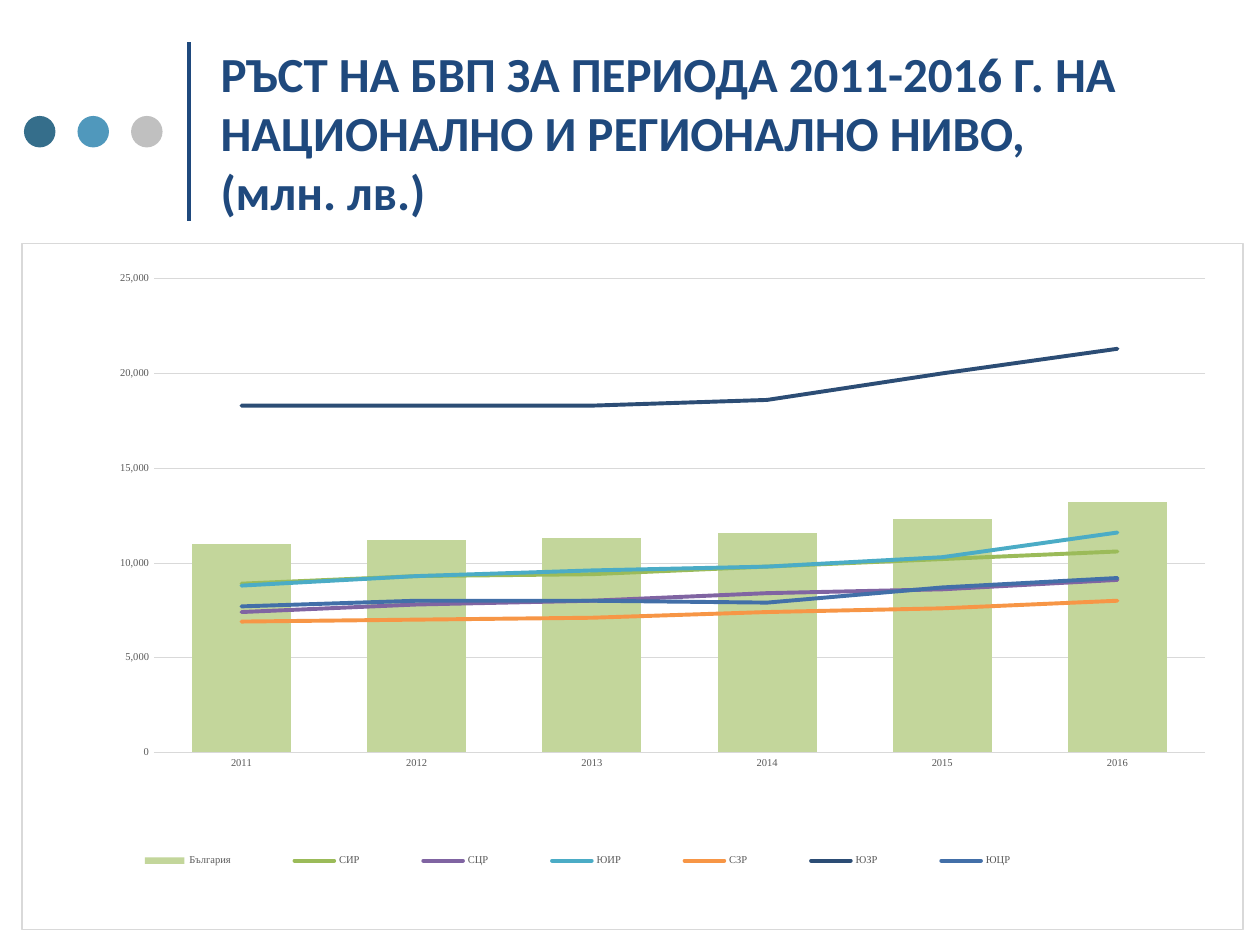
from lxml import etree
from pptx import Presentation
from pptx.chart.data import CategoryChartData
from pptx.dml.color import RGBColor
from pptx.enum.chart import (XL_CHART_TYPE as ChartType, XL_LEGEND_POSITION as LegendPosition,
                             XL_MARKER_STYLE as Marker, XL_TICK_MARK as Tick)
from pptx.enum.shapes import MSO_CONNECTOR as Connector, MSO_SHAPE as Shape
from pptx.enum.text import MSO_ANCHOR as Anchor, PP_ALIGN as Align
from pptx.oxml import parse_xml
from pptx.oxml.ns import nsdecls, qn
from pptx.util import Inches, Pt

COLORS = {"navy": "1F497D", "teal": "356E8B", "sky": "5098BC", "silver": "C0C0C0",
          "rule": "D9D9D9", "label": "595959", "white": "FFFFFF"}
YEARS = ["2011", "2012", "2013", "2014", "2015", "2016"]
COUNTRY = ("България", "C3D69B", [11000, 11200, 11300, 11600, 12300, 13200])
REGIONS = [
    ("СИР", "9BBB59", [8900, 9300, 9400, 9800, 10200, 10600]),
    ("СЦР", "8064A2", [7400, 7800, 8000, 8400, 8600, 9100]),
    ("ЮИР", "4BACC6", [8800, 9300, 9600, 9800, 10300, 11600]),
    ("СЗР", "F79646", [6900, 7000, 7100, 7400, 7600, 8000]),
    ("ЮЗР", "2C4D75", [18300, 18300, 18300, 18600, 20000, 21300]),
    ("ЮЦР", "426FA8", [7700, 8000, 8000, 7900, 8700, 9200]),
]


def rgb(color):
    return RGBColor.from_string(COLORS.get(color, color))


def set_font(font, name, size, color, bold=False):
    font.name, font.size, font.bold = name, Pt(size), bold
    font.color.rgb = rgb(color)


def write_text(frame, text, align=Align.LEFT, **font_format):
    """Fill a frame with one paragraph; a vertical tab breaks the line."""
    paragraph = frame.paragraphs[0]
    paragraph.text = text
    paragraph.alignment = align
    for run in paragraph.runs:
        set_font(run.font, **font_format)


def set_line(line, color, width):
    line.color.rgb = rgb(color)
    line.width = Pt(width)


def manual_layout(x, y, w, h, inner=False):
    target = '<c:layoutTarget val="inner"/>' if inner else ""
    sizes = "".join(f'<c:{tag} val="{value}"/>' for tag, value in zip("xywh", (x, y, w, h)))
    return parse_xml(f'<c:layout {nsdecls("c")}><c:manualLayout>{target}<c:xMode val="edge"/>'
                     f'<c:yMode val="edge"/>{sizes}</c:manualLayout></c:layout>')


def replace_layout(parent, layout, index):
    for old in parent.findall(qn("c:layout")):
        parent.remove(old)
    parent.insert(index, layout)


def move_to_lines(chart):
    """Move every series after the first from the columns to a line plot on the same axes."""
    bars = chart.plots[0]
    bar_xml = bars.series[0]._element.getparent()
    lines = parse_xml(f'<c:lineChart {nsdecls("c")}><c:grouping val="standard"/>'
                      '<c:varyColors val="0"/></c:lineChart>')
    for series in list(bars.series)[1:]:
        series_xml = series._element
        for flag in series_xml.findall(qn("c:invertIfNegative")):
            series_xml.remove(flag)
        lines.append(series_xml)
    etree.SubElement(lines, qn("c:marker")).set("val", "1")
    for axis_id in bar_xml.findall(qn("c:axId")):
        etree.SubElement(lines, qn("c:axId")).set("val", axis_id.get("val"))
    bar_xml.addnext(lines)


class SlideBuilder:
    chart_font = {"name": "Times New Roman", "size": 6, "color": "label"}
    title_font = {"name": "Calibri", "size": 28, "color": "navy", "bold": True}

    def __init__(self, slide):
        self.slide = slide

    def title(self, text, left, top, width, height):
        title = self.slide.shapes.title
        title.left, title.top = Inches(left), Inches(top)
        title.width, title.height = Inches(width), Inches(height)
        frame = title.text_frame
        frame.word_wrap = True
        frame.vertical_anchor = Anchor.MIDDLE
        frame.margin_left = frame.margin_right = Inches(0.08)
        frame.margin_top = frame.margin_bottom = Inches(0.08)
        write_text(frame, text, **self.title_font)

    def rule(self, x, top, bottom):
        rule = self.slide.shapes.add_connector(
            Connector.STRAIGHT, Inches(x), Inches(bottom), Inches(x), Inches(top))
        set_line(rule.line, "navy", 2)
        etree.SubElement(rule._element.spPr, qn("a:effectLst"))

    def dot(self, left, top, size, color):
        dot = self.slide.shapes.add_shape(
            Shape.OVAL, Inches(left), Inches(top), Inches(size), Inches(size))
        dot.shadow.inherit = False
        dot.fill.solid()
        dot.fill.fore_color.rgb = rgb(color)
        dot.line.fill.background()

    def growth_chart(self, left, top, width, height):
        data = CategoryChartData(number_format="#,##0")
        data.categories = YEARS
        for name, _, values in [COUNTRY, *REGIONS]:
            data.add_series(name, values)
        chart = self.slide.shapes.add_chart(
            ChartType.COLUMN_CLUSTERED, Inches(left), Inches(top),
            Inches(width), Inches(height), data).chart
        chart.has_title = False
        set_font(chart.font, "Times New Roman", 8, "000000")
        move_to_lines(chart)
        self.style_series(chart)
        self.style_axes(chart)
        self.style_frame(chart)

    def style_series(self, chart):
        bars, lines = chart.plots
        bars.gap_width = 77
        bars.vary_by_categories = False
        column_fill = bars.series[0].format.fill
        column_fill.solid()
        column_fill.fore_color.rgb = rgb(COUNTRY[1])
        for series, (_, color, _) in zip(lines.series, REGIONS):
            set_line(series.format.line, color, 2.25)
            series._element.spPr.find(qn("a:ln")).set("cap", "rnd")
            series.marker.style = Marker.NONE
            series.smooth = False

    def style_axes(self, chart):
        years, amounts = chart.category_axis, chart.value_axis
        for axis in (years, amounts):
            axis.major_tick_mark = axis.minor_tick_mark = Tick.NONE
            set_font(axis.tick_labels.font, **self.chart_font)
        set_line(years.format.line, "rule", 0.75)
        amounts.format.line.fill.background()
        amounts.minimum_scale, amounts.maximum_scale, amounts.major_unit = 0, 25000, 5000
        amounts.tick_labels.number_format = "#,##0"
        amounts.tick_labels.number_format_is_linked = False
        set_line(amounts.major_gridlines.format.line, "rule", 0.25)

    def style_frame(self, chart):
        chart.has_legend = True
        legend = chart.legend
        legend.position = LegendPosition.BOTTOM
        legend.include_in_layout = False
        set_font(legend.font, **self.chart_font)
        replace_layout(legend._element, manual_layout(0.05, 0.87, 0.81, 0.06), 1)
        space = chart._chartSpace
        plot_area = space.chart.plotArea
        replace_layout(plot_area, manual_layout(0.108, 0.051, 0.861, 0.691, inner=True), 0)
        space.chart.addnext(parse_xml(
            f'<c:spPr {nsdecls("c", "a")}>'
            f'<a:solidFill><a:srgbClr val="{COLORS["white"]}"/></a:solidFill>'
            f'<a:ln w="{Pt(0.75)}"><a:solidFill><a:srgbClr val="{COLORS["rule"]}"/></a:solidFill>'
            '</a:ln></c:spPr>'))


def main():
    deck = Presentation()
    deck.slide_width, deck.slide_height = Inches(10), Inches(7.5)
    builder = SlideBuilder(deck.slides.add_slide(deck.slide_layouts[5]))
    builder.rule(1.5, 0.33, 1.75)
    for position, color in enumerate(("teal", "sky", "silver")):
        builder.dot(0.19 + 0.425 * position, 0.92, 0.25, color)
    builder.title("РЪСТ НА БВП ЗА ПЕРИОДА 2011-2016 Г. НА НАЦИОНАЛНО И РЕГИОНАЛНО НИВО, "
                  "\v(млн. лв.)", 1.67, 0.21, 8.23, 1.67)
    builder.growth_chart(0.17, 1.93, 9.7, 5.45)
    deck.save("out.pptx")


if __name__ == "__main__":
    main()
